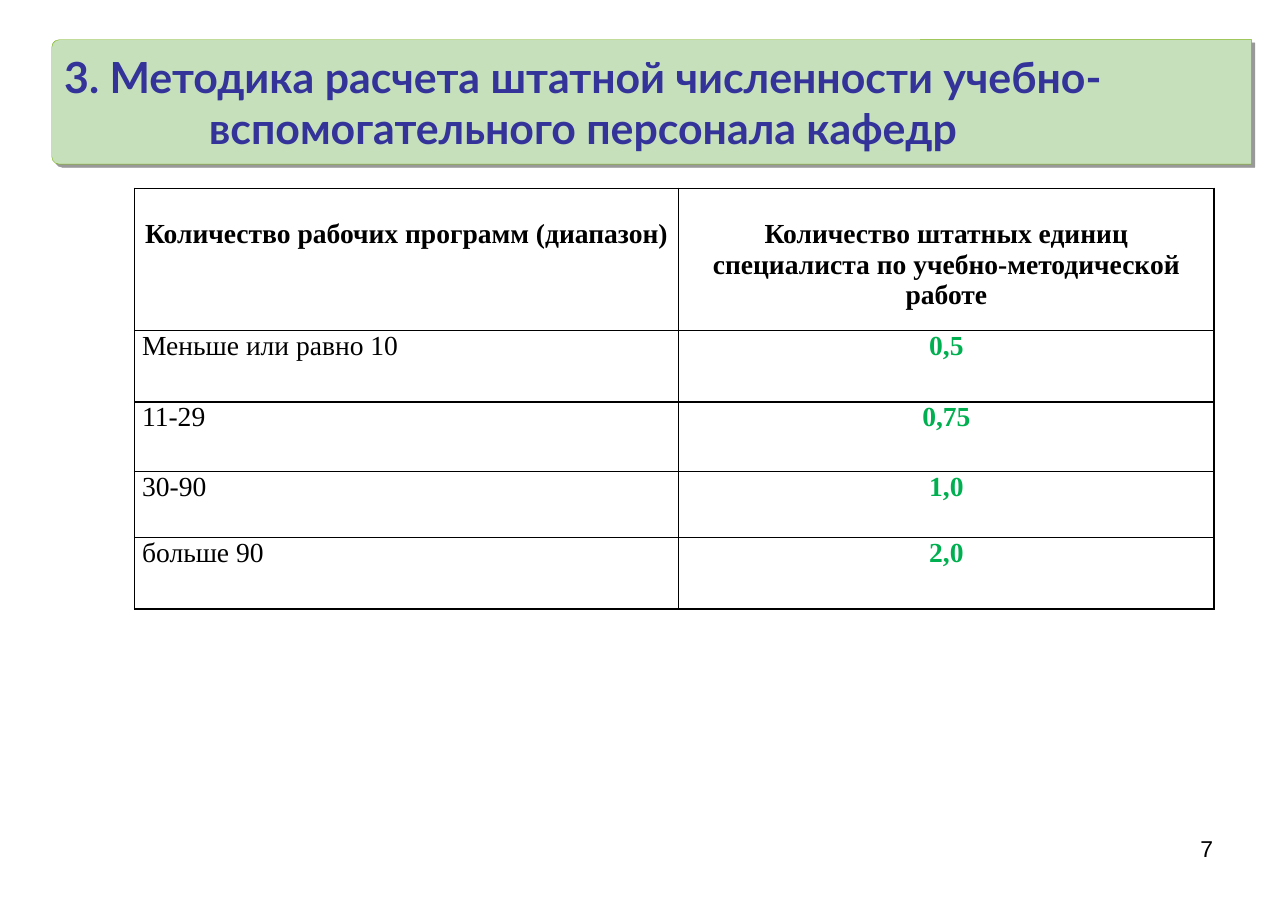
import pptx
import pptx.dml.color
import pptx.enum.shapes
import pptx.enum.text
import pptx.oxml
import pptx.oxml.ns
import pptx.util
from pptx.util import Inches

COLORS = {
    "black": "000000",
    "banner": "C6E0BC",
    "edge": "78B012",
    "title": "333399",
    "value": "00B050",
}
HEADERS = (
    "Количество рабочих программ (диапазон)",
    "Количество штатных единиц специалиста по учебно-методической работе",
)
STAFF_RATES = (
    ("Меньше или равно 10", "0,5"),
    ("11-29", "0,75"),
    ("30-90", "1,0"),
    ("больше 90", "2,0"),
)
COL_WIDTHS = (4.94, 4.86)
ROW_HEIGHTS = (1.29, 0.65, 0.63, 0.6, 0.65)
ALIGN = pptx.enum.text.PP_ALIGN


def rgb(name):
    return pptx.dml.color.RGBColor.from_string(COLORS[name])


def format_paragraph(p, font, size, color, align, bold=False):
    p.alignment = align
    p.font.name = font
    p.font.size = pptx.util.Pt(size)
    p.font.bold = bold
    p.font.color.rgb = rgb(color)


def add_shadow(sp):
    sp.shadow.inherit = False
    effects = sp._element.spPr.find(pptx.oxml.ns.qn("a:effectLst"))
    effects.append(pptx.oxml.parse_xml(
        f'<a:outerShdw {pptx.oxml.ns.nsdecls("a")} dist="38100" dir="2700000"'
        f' algn="tl" rotWithShape="0"><a:srgbClr val="{COLORS["black"]}">'
        '<a:alpha val="40000"/></a:srgbClr></a:outerShdw>'))


def add_banner(slide, left, top, width, height):
    # Plate: turned a quarter so that its rounded corners face left
    sp = slide.shapes.add_shape(
        pptx.enum.shapes.MSO_SHAPE.ROUND_2_SAME_RECTANGLE,
        Inches(left + (width - height) / 2), Inches(top + (height - width) / 2),
        Inches(height), Inches(width))
    sp.rotation = 270
    sp.adjustments[0] = 0.06
    sp.fill.solid()
    sp.fill.fore_color.rgb = rgb("banner")
    sp.line.color.rgb = rgb("edge")
    sp.line.width = pptx.util.Pt(0.25)
    add_shadow(sp)

    # Title, in front of the plate
    title = slide.shapes.title
    slide.shapes._spTree.append(title._element)
    title.left, title.top = Inches(left), Inches(top)
    title.width, title.height = Inches(width - 1.25), Inches(height)
    tf = title.text_frame
    tf.margin_left = tf.margin_right = tf.margin_top = tf.margin_bottom = 0
    tf.word_wrap = True
    tf.auto_size = pptx.enum.text.MSO_AUTO_SIZE.NONE
    tf.vertical_anchor = pptx.enum.text.MSO_ANCHOR.MIDDLE
    tf.text = ("3. Методика расчета штатной численности "
               "учебно-вспомогательного персонала кафедр")
    format_paragraph(tf.paragraphs[0], "Lato", 28, "title", ALIGN.CENTER, True)


def add_borders(cell):
    tcPr = cell._tc.get_or_add_tcPr()
    for i, side in enumerate(("lnL", "lnR", "lnT", "lnB")):
        tcPr.insert(i, pptx.oxml.parse_xml(
            f'<a:{side} {pptx.oxml.ns.nsdecls("a")} w="12700"><a:solidFill>'
            f'<a:srgbClr val="{COLORS["black"]}"/></a:solidFill></a:{side}>'))


def add_rates_table(slide, left, top):
    rows = (HEADERS,) + STAFF_RATES
    table = slide.shapes.add_table(
        len(rows), len(HEADERS), Inches(left), Inches(top),
        Inches(sum(COL_WIDTHS)), Inches(sum(ROW_HEIGHTS))).table
    table.first_row = table.horz_banding = False
    for column, width in zip(table.columns, COL_WIDTHS):
        column.width = Inches(width)
    for i, (texts, height) in enumerate(zip(rows, ROW_HEIGHTS)):
        table.rows[i].height = Inches(height)
        for j, text in enumerate(texts):
            header, value = i == 0, j == 1
            cell = table.cell(i, j)
            cell.fill.background()
            add_borders(cell)
            cell.margin_left = cell.margin_right = Inches(0.07)
            cell.margin_top = Inches(0.28 if header else 0)
            cell.margin_bottom = 0
            cell.text = text
            format_paragraph(
                cell.text_frame.paragraphs[0], "Times New Roman", 18,
                "value" if value and not header else "black",
                ALIGN.CENTER if header or value else ALIGN.JUSTIFY,
                header or value)


def add_page_number(slide, left, top, width, height):
    tf = slide.shapes.add_textbox(
        Inches(left), Inches(top), Inches(width), Inches(height)).text_frame
    tf.word_wrap = True
    tf.text = "7"
    format_paragraph(tf.paragraphs[0], "Arial", 15, "black", ALIGN.RIGHT)


def main():
    prs = pptx.Presentation()
    prs.slide_width, prs.slide_height = Inches(11.69), Inches(8.27)
    slide = prs.slides.add_slide(prs.slide_layouts[5])
    add_page_number(slide, 8.38, 7.53, 2.73, 0.57)
    add_rates_table(slide, 1.22, 1.71)
    add_banner(slide, 0.47, 0.36, 10.89, 1.13)
    prs.save("out.pptx")


if __name__ == "__main__":
    main()
